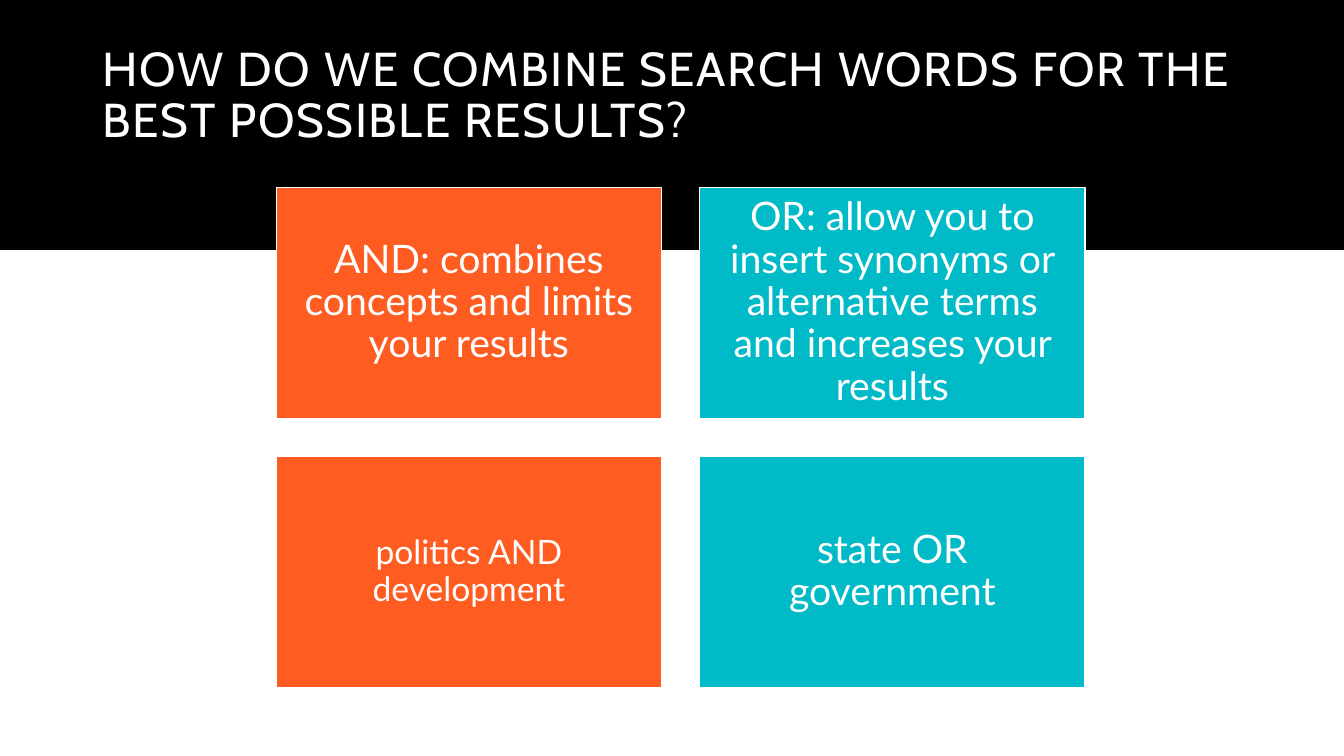
from pptx import Presentation
from pptx.dml.color import RGBColor
from pptx.enum.shapes import MSO_SHAPE as Shape
from pptx.enum.text import MSO_ANCHOR as Anchor, PP_ALIGN as Align
from pptx.util import Inches, Pt

# Content
TITLE = "HOW DO WE COMBINE SEARCH WORDS FOR THE BEST POSSIBLE RESULTS?"
ORANGE, TEAL, WHITE, BLACK = "FF5C21", "00BAC7", "FFFFFF", "000000"
COLUMN_FILLS = [ORANGE, TEAL]
# Each card: wording, text size, inset
CARD_ROWS = [
    [("AND: combines concepts and limits your results", 28, 0.12),
     ("OR: allow you to insert synonyms or alternative terms and increases your results", 28, 0.12)],
    [("politics AND development", 24, 0.1),
     ("state OR government", 28, 0.12)],
]

# Layout in inches
SLIDE_W, SLIDE_H = 13.33, 7.5
BAND_H = 2.48
GRID_LEFT, GRID_TOP = 2.74, 1.86
CARD_W, CARD_H, GAP = 3.82, 2.29, 0.38


def color(value):
    return RGBColor.from_string(value)


def add_rect(page, left, top, width, height, fill, line=None):
    box = page.shapes.add_shape(
        Shape.RECTANGLE, *map(Inches, (left, top, width, height)))
    box.shadow.inherit = False
    box.fill.solid()
    box.fill.fore_color.rgb = color(fill)
    if line:
        box.line.color.rgb = color(line)
        box.line.width = Pt(1)
    else:
        box.line.fill.background()
    return box


def write(box, text, font, size, align, inset_x, inset_y):
    frame = box.text_frame
    frame_format = {
        "word_wrap": True, "vertical_anchor": Anchor.MIDDLE,
        "margin_left": Inches(inset_x), "margin_right": Inches(inset_x),
        "margin_top": Inches(inset_y), "margin_bottom": Inches(inset_y),
    }
    para = frame.paragraphs[0]
    span = para.add_run()
    span.text = text
    for target, values in (
        (frame, frame_format),
        (para, {"alignment": align, "line_spacing": 0.9}),
        (span.font, {"name": font, "size": Pt(size)}),
    ):
        for name, value in values.items():
            setattr(target, name, value)
    span.font.color.rgb = color(WHITE)
    return span


deck = Presentation()
deck.slide_width, deck.slide_height = Inches(SLIDE_W), Inches(SLIDE_H)
page = deck.slides.add_slide(deck.slide_layouts[6])

# Header band and title
add_rect(page, 0, 0, SLIDE_W, BAND_H, BLACK)
title_box = page.shapes.add_textbox(*map(Inches, (0.92, 0.37, 11.49, 1.18)))
title_span = write(title_box, TITLE, "Cabin", 34, Align.LEFT, 0.1, 0.05)
title_span.font._element.set("spc", "120")  # letter spacing, 1.2 pt

# Grid of cards: operator above, example below
for row, cards in enumerate(CARD_ROWS):
    for column, (text, size, inset) in enumerate(cards):
        left = GRID_LEFT + column * (CARD_W + GAP)
        top = GRID_TOP + row * (CARD_H + GAP)
        card = add_rect(page, left, top, CARD_W, CARD_H,
                        COLUMN_FILLS[column], WHITE)
        write(card, text, "Lato", size, Align.CENTER, inset, inset)

deck.save("out.pptx")
